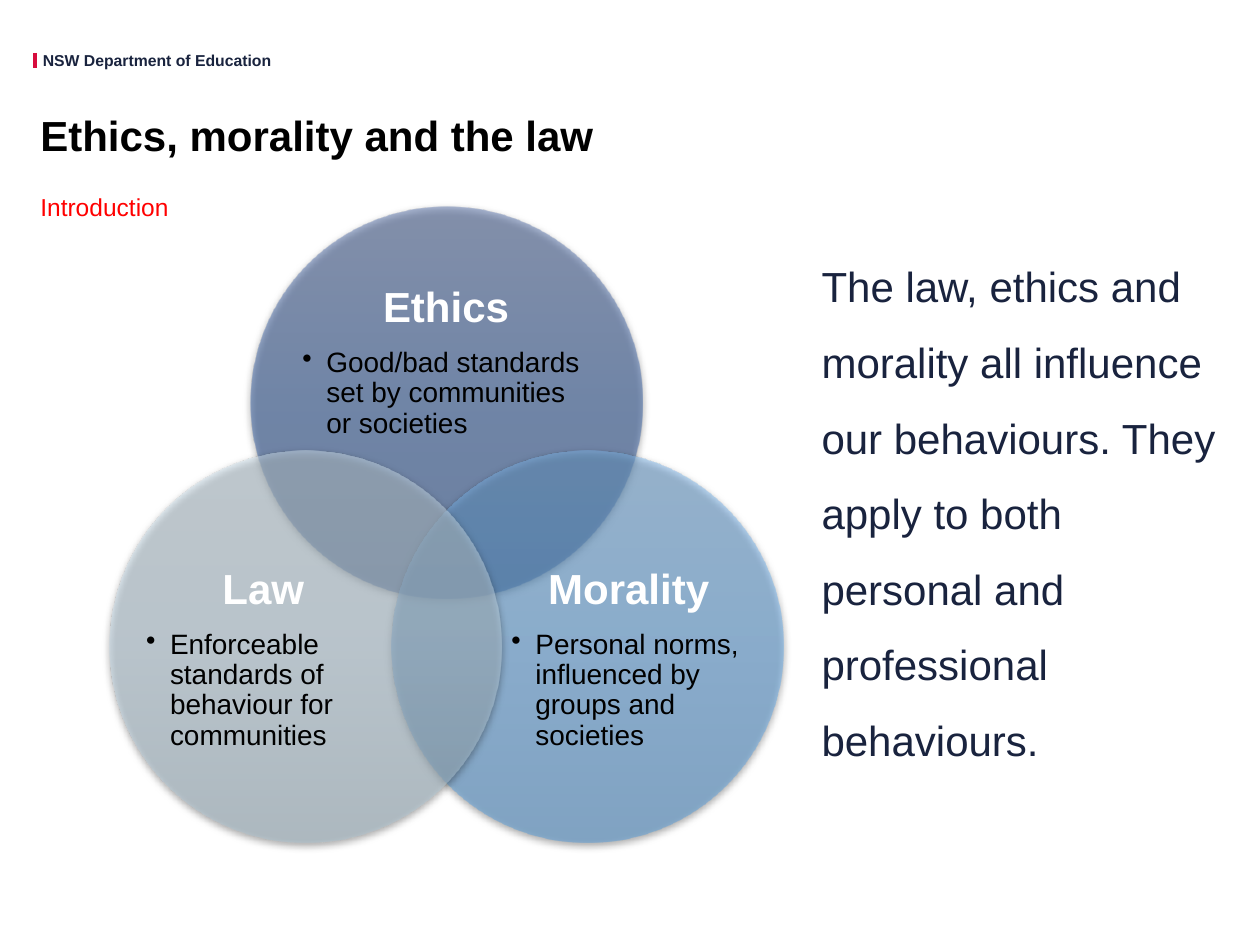
from dataclasses import dataclass
from math import cos, radians, sin
from typing import Any

from lxml.etree import SubElement
from pptx import Presentation
from pptx.dml.color import RGBColor
from pptx.enum.shapes import MSO_CONNECTOR, MSO_SHAPE
from pptx.enum.text import MSO_ANCHOR, MSO_AUTO_SIZE, PP_ALIGN
from pptx.oxml import parse_xml
from pptx.oxml.ns import nsdecls, qn
from pptx.util import Inches, Pt

COLS, ROWS = 100, 75
CELL = Inches(0.1)


@dataclass(frozen=True)
class Theme:
    font: str = "Arial"
    navy: str = "19233E"
    red: str = "D70C3D"
    accent: str = "FF0000"
    black: str = "000000"
    white: str = "FFFFFF"
    brand: float = 9
    small: float = 14
    detail: float = 16
    large: float = 24


@dataclass(frozen=True)
class Box:
    col: float
    row: float
    cols: float
    rows: float

    def emu(self) -> tuple[int, ...]:
        return tuple(round(n * CELL) for n in (self.col, self.row, self.cols, self.rows))


@dataclass(frozen=True)
class Circle:
    heading: str
    detail: str
    angle: float
    colors: tuple[str, str, str]
    text: Box


T = Theme()
DIAMETER = 31.1
CENTRE = (35.45, 44.88)
ORBIT = 12.93
CIRCLES = (
    Circle("Ethics", "Good/bad standards set by communities or societies", -90,
           ("5972A9", "335DA2", "295194"), Box(24, 21.8, 22.8, 14)),
    Circle("Morality", "Personal norms, influenced by groups and societies", 30,
           ("7FB5E8", "66ACEA", "539AD7"), Box(40.6, 43.8, 18.6, 17.1)),
    Circle("Law", "Enforceable standards of behaviour for communities", 150,
           ("CFE0EB", "C4DAE9", "ACC3D1"), Box(11.6, 43.8, 18.6, 17.1)),
)


def assign(target: Any, values: dict[str, Any]) -> None:
    for name, value in values.items():
        setattr(target, name, value)


def place(sp: Any, box: Box) -> None:
    assign(sp, dict(zip(("left", "top", "width", "height"), box.emu())))


def set_frame(tf: Any, insets: tuple[float, ...], anchor: Any = MSO_ANCHOR.TOP,
              wrap: bool = True) -> None:
    sides = ("margin_left", "margin_top", "margin_right", "margin_bottom")
    assign(tf, dict(zip(sides, map(Inches, insets))))
    assign(tf, {"word_wrap": wrap, "vertical_anchor": anchor, "auto_size": MSO_AUTO_SIZE.NONE})


def write(p: Any, text: str, size: float, color: str, bold: bool = False,
          spacing: float = 1, after: float = 0, align: Any = PP_ALIGN.LEFT,
          bullet: bool = False) -> None:
    pPr = p._p.get_or_add_pPr()
    hang = Inches(0.19) if bullet else 0
    pPr.set("marL", str(hang))
    pPr.set("indent", str(-hang))
    if bullet:
        SubElement(pPr, qn("a:buChar")).set("char", "•")
    else:
        SubElement(pPr, qn("a:buNone"))
    assign(p, {"alignment": align, "line_spacing": spacing,
               "space_before": Pt(0), "space_after": Pt(after)})
    r = p.add_run()
    r.text = text
    assign(r.font, {"name": T.font, "size": Pt(size), "bold": bold})
    r.font.color.rgb = RGBColor.from_string(color)


def add_brand(s: Any) -> None:
    x, top, bottom = (round(n * CELL) for n in (2.8, 4.2, 5.4))
    bar = s.shapes.add_connector(MSO_CONNECTOR.STRAIGHT, x, top, x, bottom)
    bar.line.color.rgb = RGBColor.from_string(T.red)
    bar.line.width = Pt(2.5)
    SubElement(bar._element.spPr, qn("a:effectLst"))
    tf = s.shapes.add_textbox(*Box(3.4, 4, 18.3, 1.5).emu()).text_frame
    set_frame(tf, (0, 0, 0, 0), wrap=False)
    write(tf.paragraphs[0], "NSW Department of Education", T.brand, T.navy, bold=True)


def add_circle(shapes: Any, circle: Circle) -> None:
    angle = radians(circle.angle)
    box = Box(CENTRE[0] + ORBIT * cos(angle) - DIAMETER / 2,
              CENTRE[1] + ORBIT * sin(angle) - DIAMETER / 2, DIAMETER, DIAMETER)
    sp = shapes.add_shape(MSO_SHAPE.OVAL, *box.emu())
    sp.line.fill.background()
    stops = "".join(
        f'<a:gs pos="{i * 50000}"><a:srgbClr val="{c}"><a:alpha val="50000"/></a:srgbClr></a:gs>'
        for i, c in enumerate(circle.colors))
    spPr = sp._element.spPr
    spPr.find(qn("a:prstGeom")).addnext(parse_xml(
        f'<a:gradFill {nsdecls("a")} rotWithShape="1"><a:gsLst>{stops}</a:gsLst>'
        '<a:lin ang="5400000" scaled="0"/></a:gradFill>'))
    spPr.append(parse_xml(
        f'<a:effectLst {nsdecls("a")}><a:outerShdw blurRad="{Pt(4.5)}" dist="{Pt(1.5)}" '
        f'dir="5400000" rotWithShape="0"><a:srgbClr val="{T.black}">'
        '<a:alpha val="63000"/></a:srgbClr></a:outerShdw></a:effectLst>'))

    tf = shapes.add_textbox(*circle.text.emu()).text_frame
    set_frame(tf, (0, 0, 0, 0), MSO_ANCHOR.MIDDLE)
    write(tf.paragraphs[0], circle.heading, T.large, T.white, bold=True,
          spacing=0.9, after=9.6, align=PP_ALIGN.CENTER)
    p = tf.add_paragraph()
    p.level = 1
    write(p, circle.detail, T.detail, T.black, spacing=0.9, after=2.7, bullet=True)


def main() -> None:
    prs = Presentation()
    prs.slide_width, prs.slide_height = COLS * CELL, ROWS * CELL
    s = prs.slides.add_slide(prs.slide_layouts[3])
    title, intro, body = s.placeholders

    add_brand(s)
    place(title, Box(3.2, 8.2, 94.3, 5.5))
    set_frame(title.text_frame, (0, 0, 0, 0), MSO_ANCHOR.MIDDLE)
    write(title.text_frame.paragraphs[0], "Ethics, morality and the law",
          T.large, T.black, bold=True, spacing=0.9)

    place(intro, Box(3.2, 13.6, 94.4, 4.6))
    set_frame(intro.text_frame, (0, 0.05, 0.1, 0.05))
    write(intro.text_frame.paragraphs[0], "Introduction",
          T.small, T.accent, spacing=1.5, after=4.5)

    place(body, Box(64.2, 18.2, 33.4, 44.3))
    set_frame(body.text_frame, (0.1, 0.05, 0.1, 0.05))
    write(body.text_frame.paragraphs[0],
          "The law, ethics and morality all influence our behaviours. "
          "They apply to both personal and professional behaviours.",
          T.large, T.navy, spacing=1.5, after=4.5)

    venn = s.shapes.add_group_shape()
    for circle in CIRCLES:
        add_circle(venn.shapes, circle)
    prs.save("out.pptx")


if __name__ == "__main__":
    main()
